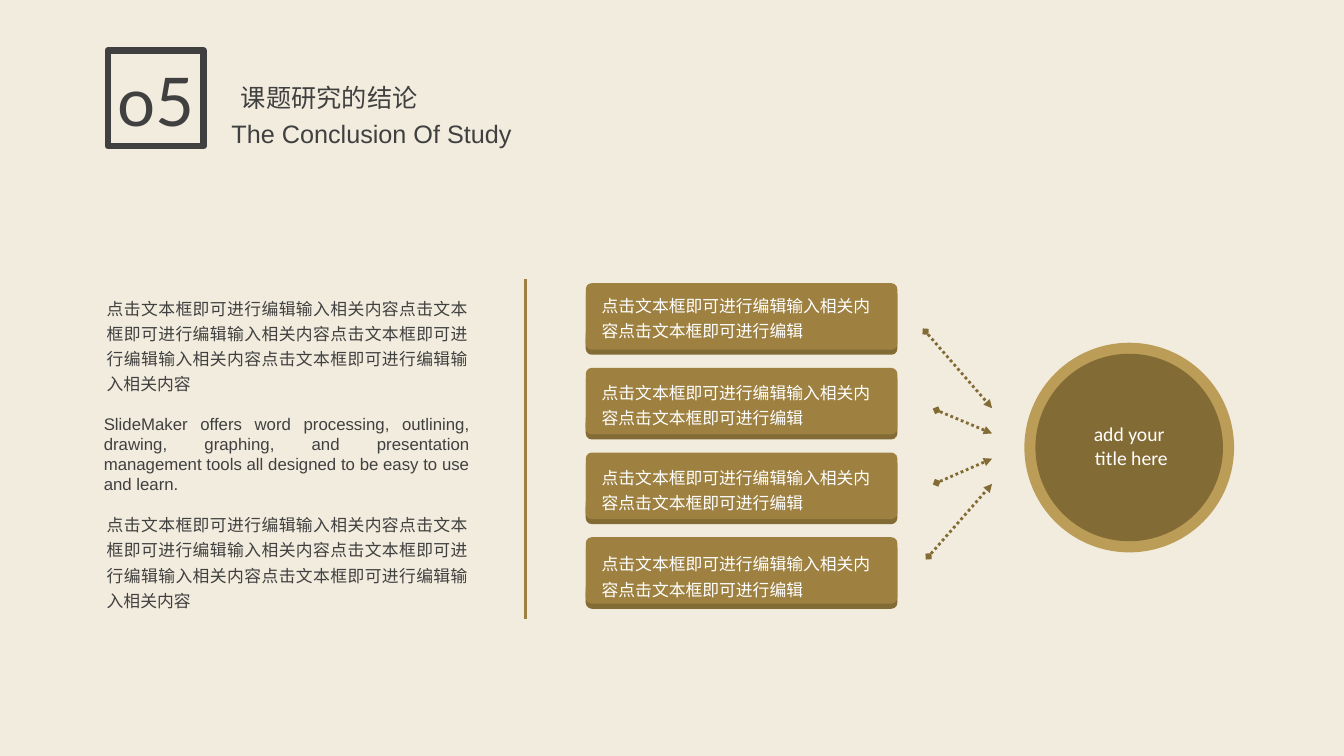
from lxml.etree import SubElement
from pptx import Presentation
from pptx.dml.color import RGBColor
from pptx.enum.dml import MSO_LINE
from pptx.enum.shapes import MSO_CONNECTOR, MSO_SHAPE
from pptx.enum.text import MSO_ANCHOR, MSO_AUTO_SIZE as AUTO_SIZE, PP_ALIGN as ALIGN
from pptx.oxml.ns import qn
from pptx.util import Inches, Pt

CREAM = RGBColor(0xF2, 0xEC, 0xDE)
CHARCOAL = RGBColor(0x40, 0x40, 0x40)
GOLD = RGBColor(0x9E, 0x81, 0x40)
DARK_GOLD = RGBColor(0x83, 0x6B, 0x35)
LIGHT_GOLD = RGBColor(0xBC, 0x9D, 0x58)
WHITE = RGBColor(0xFF, 0xFF, 0xFF)
HAN = "Noto Sans CJK SC"

SECTION_NUMBER = "o5"
HEADING = "课题研究的结论"
SUBHEADING = "The Conclusion Of Study"
CHINESE_PASSAGE = (
    "点击文本框即可进行编辑输入相关内容点击文本框即可进行编辑输入相关内容"
    "点击文本框即可进行编辑输入相关内容点击文本框即可进行编辑输入相关内容"
)
ENGLISH_PASSAGE = (
    "SlideMaker offers word processing, outlining, drawing, graphing, and presentation "
    "management tools all designed to be easy to use and learn. "
)
PASSAGES = [
    (CHINESE_PASSAGE, (0.96, 2.86, 3.78, 1.11), HAN, 1.25, (0.1, 0.05, 0.1, 0.05)),
    (ENGLISH_PASSAGE, (1.03, 4.1, 3.63, 0.81), "Arial", 1, (0, 0, 0, 0)),
    (CHINESE_PASSAGE, (0.96, 5.01, 3.78, 1.11), HAN, 1.25, (0.1, 0.05, 0.1, 0.05)),
]
CARD_TEXT = "点击文本框即可进行编辑输入相关内容点击文本框即可进行编辑"
CARD_TEXT_DROPS = [0.06, 0.08, 0.08, 0.1]
CARD_LEFT, CARD_TOP, CARD_WIDTH, CARD_HEIGHT = 5.81, 2.81, 3.09, 0.66
CARD_PITCH, CARD_EDGE = 0.84, 0.05
GOAL_LINES = ["add your", " title here"]
GOAL_CENTER = (11.2, 4.44)
RING_RADIUS, DISC_RADIUS = 1.04, 0.93
ARROW_STARTS = [(9.18, 3.29), (9.29, 4.07), (9.29, 4.79), (9.21, 5.52)]
ARROW_END_X, ARROW_END_TOP, ARROW_END_PITCH = 9.84, 4.05, 0.25

deck = Presentation()
deck.slide_width, deck.slide_height = Inches(13.33), Inches(7.5)
slide = deck.slides.add_slide(deck.slide_layouts[5])
slide.background.fill.solid()
slide.background.fill.fore_color.rgb = CREAM


def inches(values):
    return [Inches(value) for value in values]


def write(shape, lines, font, size, color, align=ALIGN.LEFT, spacing=1,
          insets=(0.1, 0.05, 0.1, 0.05), anchor=MSO_ANCHOR.TOP, wrap=True):
    frame = shape.text_frame
    frame.word_wrap = wrap
    frame.vertical_anchor = anchor
    frame.margin_left, frame.margin_top, frame.margin_right, frame.margin_bottom = inches(insets)
    for index, line in enumerate(lines):
        paragraph = frame.add_paragraph() if index else frame.paragraphs[0]
        paragraph.alignment = align
        paragraph.line_spacing = spacing
        run = paragraph.add_run()
        run.text = line
        run.font.size = Pt(size)
        run.font.color.rgb = color
        run.font.name = font
        SubElement(run.font._element, qn("a:ea"), typeface=font)
    return frame


def add_text(box, lines, *style, **options):
    frame = write(slide.shapes.add_textbox(*inches(box)), lines, *style, **options)
    frame.auto_size = AUTO_SIZE.SHAPE_TO_FIT_TEXT


def add_block(preset, box, fill):
    block = slide.shapes.add_shape(preset, *inches(box))
    block.shadow.inherit = False
    block.fill.solid()
    block.fill.fore_color.rgb = fill
    block.line.fill.background()
    return block


def add_circle(radius, fill):
    x, y = GOAL_CENTER
    return add_block(MSO_SHAPE.OVAL, (x - radius, y - radius, 2 * radius, 2 * radius), fill)


def add_line(start, end, color, width):
    connector = slide.shapes.add_connector(MSO_CONNECTOR.STRAIGHT, *inches(start + end))
    connector.line.color.rgb = color
    connector.line.width = Pt(width)
    SubElement(connector._element.spPr, qn("a:effectLst"))
    return connector


title = slide.shapes.title
title.left, title.top, title.width, title.height = inches((2.29, 0.47, 1.97, 0.62))
write(title, [HEADING], HAN, 18, CHARCOAL, spacing=2, wrap=False)
title.text_frame.auto_size = AUTO_SIZE.SHAPE_TO_FIT_TEXT
add_text((0.94, 1.12, 5.49, 0.4), [SUBHEADING], "Arial", 18, CHARCOAL, align=ALIGN.CENTER)

badge = add_block(MSO_SHAPE.RECTANGLE, (1.07, 0.5, 0.95, 0.95), CREAM)
badge.fill.background()
badge.line.color.rgb = CHARCOAL
badge.line.width = Pt(4.5)
write(badge, [SECTION_NUMBER], "Lato", 48, CHARCOAL, align=ALIGN.CENTER,
      insets=(0, 0.02, 0, 0), anchor=MSO_ANCHOR.MIDDLE, wrap=False)

for passage, box, font, spacing, insets in PASSAGES:
    add_text(box, [passage], font, 12, CHARCOAL, align=ALIGN.JUSTIFY,
             spacing=spacing, insets=insets)
add_line((5.21, 2.77), (5.21, 6.14), GOLD, 2.25)

for row, drop in enumerate(CARD_TEXT_DROPS):
    top = CARD_TOP + row * CARD_PITCH
    for offset, fill in ((CARD_EDGE, DARK_GOLD), (0, GOLD)):
        card = add_block(MSO_SHAPE.ROUNDED_RECTANGLE,
                         (CARD_LEFT, top + offset, CARD_WIDTH, CARD_HEIGHT), fill)
        card.adjustments[0] = 0.09
    write(card, [CARD_TEXT], HAN, 12, WHITE, spacing=1.25, insets=(0.14, drop, 0.21, 0))

for row, start in enumerate(ARROW_STARTS):
    end = (ARROW_END_X, ARROW_END_TOP + row * ARROW_END_PITCH)
    arrow = add_line(start, end, DARK_GOLD, 2)
    arrow.line.dash_style = MSO_LINE.ROUND_DOT
    outline = arrow.line._get_or_add_ln()
    SubElement(outline, qn("a:headEnd"), type="diamond")
    SubElement(outline, qn("a:tailEnd"), type="triangle")

add_circle(RING_RADIUS, LIGHT_GOLD)
goal = add_circle(DISC_RADIUS, DARK_GOLD)
write(goal, GOAL_LINES, "Calibri", 14, WHITE, align=ALIGN.CENTER,
      insets=(0, 0, 0, 0.04), anchor=MSO_ANCHOR.MIDDLE)

deck.save("out.pptx")
